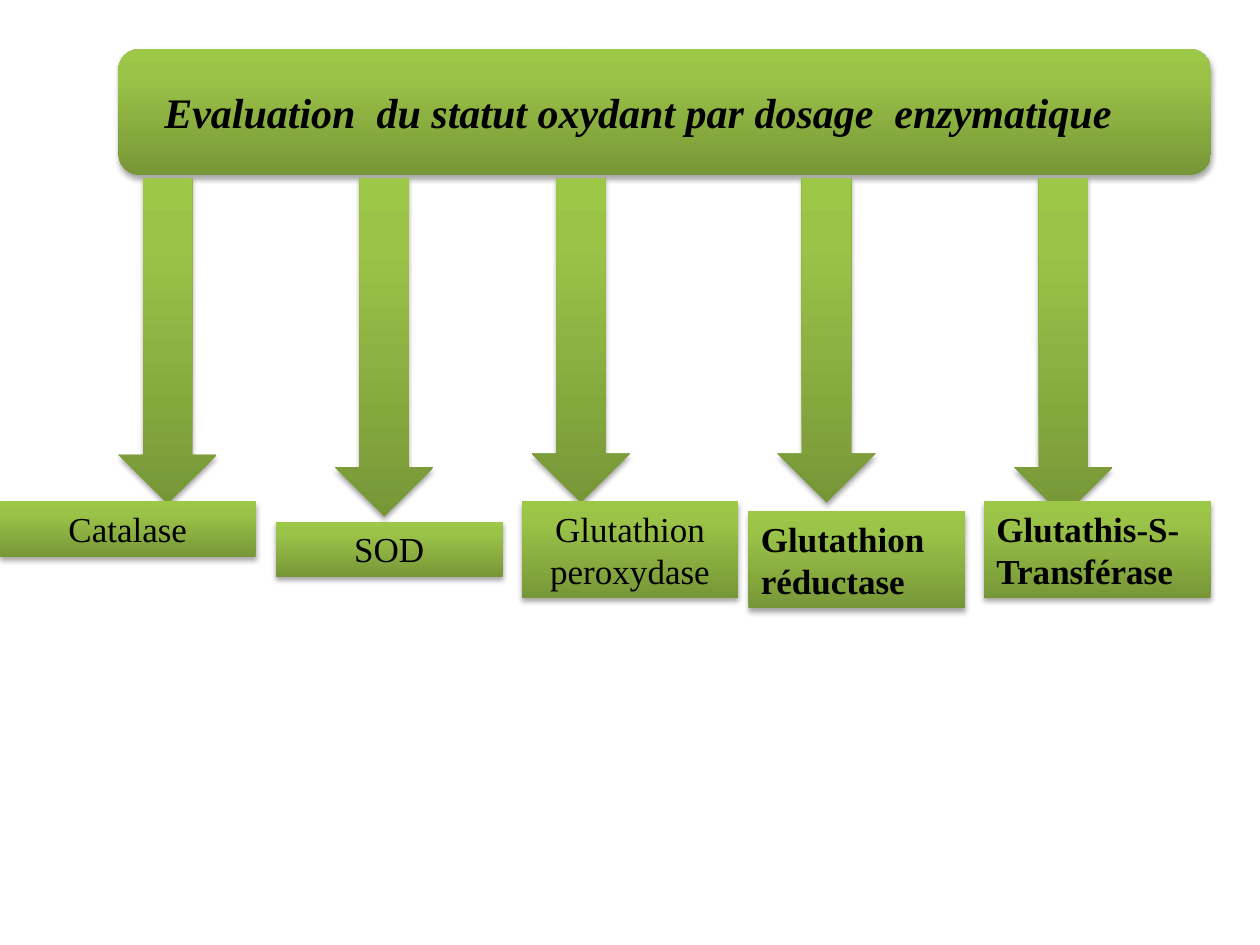
"""Build the slide on enzymatic assays of oxidative status."""
import dataclasses

import lxml.etree
import pptx
import pptx.dml.color
import pptx.enum.shapes
import pptx.enum.text
import pptx.oxml.ns
import pptx.util

Inches = pptx.util.Inches
Pt = pptx.util.Pt
qn = pptx.oxml.ns.qn
SHAPE = pptx.enum.shapes.MSO_SHAPE
ALIGN = pptx.enum.text.PP_ALIGN
ANCHOR = pptx.enum.text.MSO_ANCHOR
AUTO = pptx.enum.text.MSO_AUTO_SIZE

COLORS = {"dark": "779737", "mid": "9BC348", "light": "9DC746", "black": "000000"}
STOPS = ((0, "dark"), (80, "mid"), (100, "light"))
FONT = "Times New Roman"
ARROW_TOP = 1.41
ARROW_W = 0.78


@dataclasses.dataclass
class Enzyme:
    """An enzyme box and the arrow leading to it, in inches."""
    name: str
    left: float
    top: float
    width: float
    height: float
    arrow_left: float
    arrow_height: float
    bold: bool = False


ENZYMES = (
    Enzyme("Catalase", 0, 3.98, 2.03, 0.44, 0.94, 2.59),
    Enzyme("SOD", 2.19, 4.14, 1.8, 0.44, 2.66, 2.69),
    Enzyme("Glutathion peroxydase", 4.14, 3.98, 1.72, 0.77, 4.22, 2.58),
    Enzyme("Glutathion réductase", 5.94, 4.06, 1.72, 0.77, 6.17, 2.58, True),
    Enzyme("Glutathis-S-Transférase", 7.81, 3.98, 1.8, 0.77, 8.05, 2.69, True),
)


def add_color(parent, key: str):
    """Append an RGB colour element and return it."""
    return lxml.etree.SubElement(parent, qn("a:srgbClr"), val=COLORS[key])


def add_green_shape(s, kind, left: float, top: float, width: float, height: float):
    """Add a borderless shape with the green gradient and soft shadow."""
    sp = s.shapes.add_shape(kind, Inches(left), Inches(top), Inches(width), Inches(height))
    sp.line.fill.background()
    sp.fill.gradient()
    sp.fill.gradient_angle = 90
    stops = sp.element.spPr.find(".//" + qn("a:gsLst"))
    for stop in list(stops):
        stops.remove(stop)
    for position, key in STOPS:
        add_color(lxml.etree.SubElement(stops, qn("a:gs"), pos=str(position * 1000)), key)
    sp.shadow.inherit = False
    effects = sp.element.spPr.find(qn("a:effectLst"))
    shadow = lxml.etree.SubElement(
        effects, qn("a:outerShdw"), blurRad=str(Pt(3.1)), dist=str(Pt(1.8)),
        dir="5400000", rotWithShape="0")
    lxml.etree.SubElement(add_color(shadow, "black"), qn("a:alpha"), val="35000")
    return sp


def write(sp, text: str, *, size: int = 20, bold: bool = False, italic: bool = False,
          align=ALIGN.CENTER, anchor=ANCHOR.TOP, auto=AUTO.SHAPE_TO_FIT_TEXT) -> None:
    """Write one formatted paragraph into a shape."""
    tf = sp.text_frame
    tf.word_wrap = True
    tf.auto_size = auto
    tf.vertical_anchor = anchor
    p = tf.paragraphs[0]
    p.alignment = align
    r = p.add_run()
    r.text = text
    r.font.name = FONT
    r.font.size = Pt(size)
    r.font.bold = bold
    r.font.italic = italic
    r.font.color.rgb = pptx.dml.color.RGBColor.from_string(COLORS["black"])


def add_enzyme(s, e: Enzyme) -> None:
    """Draw an arrow and the enzyme box below it."""
    add_green_shape(s, SHAPE.DOWN_ARROW, e.arrow_left, ARROW_TOP, ARROW_W, e.arrow_height)
    box = add_green_shape(s, SHAPE.RECTANGLE, e.left, e.top, e.width, e.height)
    write(box, e.name, bold=e.bold, align=ALIGN.LEFT if e.bold else ALIGN.CENTER)


def main() -> None:
    """Create and save the presentation."""
    prs = pptx.Presentation()
    prs.slide_width, prs.slide_height = Inches(10), Inches(7.5)
    s = prs.slides.add_slide(prs.slide_layouts[6])
    title = add_green_shape(s, SHAPE.ROUNDED_RECTANGLE, 0.94, 0.39, 8.67, 1)
    title.text_frame.margin_right = Inches(0.52)
    write(title, "Evaluation  du statut oxydant par dosage  enzymatique", size=24,
          bold=True, italic=True, anchor=ANCHOR.MIDDLE, auto=AUTO.NONE)
    for e in ENZYMES:
        add_enzyme(s, e)
    prs.save("out.pptx")


if __name__ == "__main__":
    main()
